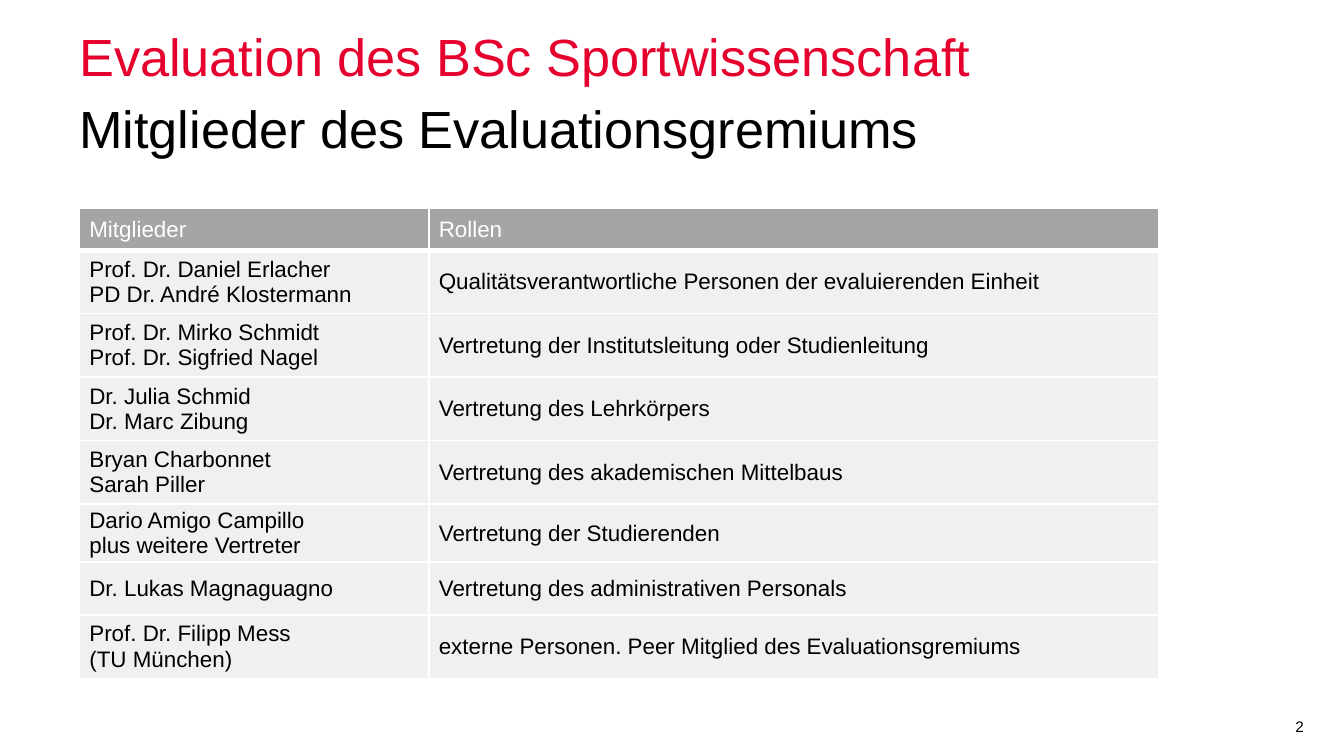
import pptx
import pptx.util
import pptx.dml.color
import pptx.enum.text
import pptx.oxml
import pptx.oxml.ns
import lxml.etree

Inches = pptx.util.Inches
Pt = pptx.util.Pt
ALIGN = pptx.enum.text.PP_ALIGN
ANCHOR = pptx.enum.text.MSO_ANCHOR

COLORS = {
    "red": "E6002E",
    "black": "000000",
    "white": "FFFFFF",
    "head": "A5A5A5",
    "row": "F0F0F0",
}

HEADS = ["Mitglieder\u00a0", "Rollen"]
MEMBERS = [
    ("Prof. Dr. Daniel Erlacher\nPD Dr. André Klostermann",
     "Qualitätsverantwortliche Personen der evaluierenden Einheit"),
    ("Prof. Dr. Mirko Schmidt\nProf. Dr. Sigfried Nagel",
     "Vertretung der Institutsleitung oder Studienleitung"),
    ("Dr. Julia Schmid\nDr. Marc Zibung", "Vertretung des Lehrkörpers"),
    ("Bryan Charbonnet\nSarah Piller", "Vertretung des akademischen Mittelbaus"),
    ("Dario Amigo Campillo\nplus weitere Vertreter", "Vertretung der Studierenden"),
    ("Dr. Lukas Magnaguagno", "Vertretung des administrativen Personals"),
    ("Prof. Dr. Filipp Mess\n(TU München)",
     "externe Personen. Peer Mitglied des Evaluationsgremiums"),
]
WIDTHS = [2.6, 5.43]
# Row heights share the full table height in these proportions
HEIGHT = 3.5
SHARES = [0.31, 0.47, 0.47, 0.47, 0.47, 0.43, 0.39, 0.47]


def rgb(name):
    return pptx.dml.color.RGBColor.from_string(COLORS[name])


def write(frame, text, size=12, color="black", align=ALIGN.LEFT, lead=None):
    """Fill a text frame, one paragraph per line of text."""
    frame.text = text
    for para in frame.paragraphs:
        props = para._p.get_or_add_pPr()
        props.set("marL", "0")
        props.set("indent", "0")
        lxml.etree.SubElement(props, pptx.oxml.ns.qn("a:buNone"))
        para.alignment = align
        para.space_before = Pt(0)
        if lead:
            para.line_spacing = Pt(lead)
        for run in para.runs:
            run.font.name = "Arial"
            run.font.size = Pt(size)
            run.font.color.rgb = rgb(color)


def heading(shape, text, top, anchor, **style):
    """Move a placeholder into the heading column and fill it."""
    shape.left, shape.top = Inches(0.59), Inches(top)
    shape.width, shape.height = Inches(7.68), Inches(0.45)
    frame = shape.text_frame
    frame.margin_left = frame.margin_right = 0
    frame.margin_top = frame.margin_bottom = 0
    frame.auto_size = pptx.enum.text.MSO_AUTO_SIZE.NONE
    frame.vertical_anchor = anchor
    write(frame, text, size=28, **style)


def border(cell, side, width):
    props = cell._tc.get_or_add_tcPr()
    props.append(pptx.oxml.parse_xml(
        f'<a:ln{side} {pptx.oxml.ns.nsdecls("a")} w="{Pt(width)}"><a:solidFill>'
        f'<a:srgbClr val="{COLORS["white"]}"/></a:solidFill></a:ln{side}>'))


def fill_cell(cell, text, row):
    head = row == 0
    cell.margin_left = cell.margin_right = Inches(0.15) // 2
    cell.margin_top = cell.margin_bottom = 0
    cell.vertical_anchor = ANCHOR.MIDDLE
    # The line between head and body is thicker
    for side in "LRTB":
        thick = (side == "B" and head) or (side == "T" and row == 1)
        border(cell, side, 3 if thick else 1)
    cell.fill.solid()
    cell.fill.fore_color.rgb = rgb("head" if head else "row")
    write(cell.text_frame, text, color="white" if head else "black",
          align=ALIGN.JUSTIFY if head else ALIGN.LEFT)


def add_grid(slide):
    rows = [HEADS] + MEMBERS
    table = slide.shapes.add_table(
        len(rows), len(WIDTHS), Inches(0.59), Inches(1.55),
        Inches(sum(WIDTHS)), Inches(HEIGHT)).table
    for col, width in zip(table.columns, WIDTHS):
        col.width = Inches(width)
    for i, (texts, share) in enumerate(zip(rows, SHARES)):
        table.rows[i].height = Inches(HEIGHT * share / sum(SHARES))
        for j, text in enumerate(texts):
            fill_cell(table.cell(i, j), text, i)


def add_number(slide, text):
    box = slide.shapes.add_textbox(
        Inches(9.54), Inches(5.29), Inches(0.24), Inches(0.18))
    write(box.text_frame, text, size=8.2)


def main():
    # Widescreen, 16 to 9
    deck = pptx.Presentation()
    deck.slide_width = Inches(10)
    deck.slide_height = Inches(10) * 9 // 16
    slide = deck.slides.add_slide(deck.slide_layouts[1])

    # Headings
    heading(slide.shapes.title, "Evaluation des BSc Sportwissenschaft", 0.2,
            ANCHOR.BOTTOM, color="red", lead=42.7)
    heading(slide.placeholders[1], "Mitglieder des Evaluationsgremiums", 0.74,
            ANCHOR.TOP, lead=32)

    # Members and page number
    add_grid(slide)
    add_number(slide, "2")
    deck.save("out.pptx")


if __name__ == "__main__":
    main()
